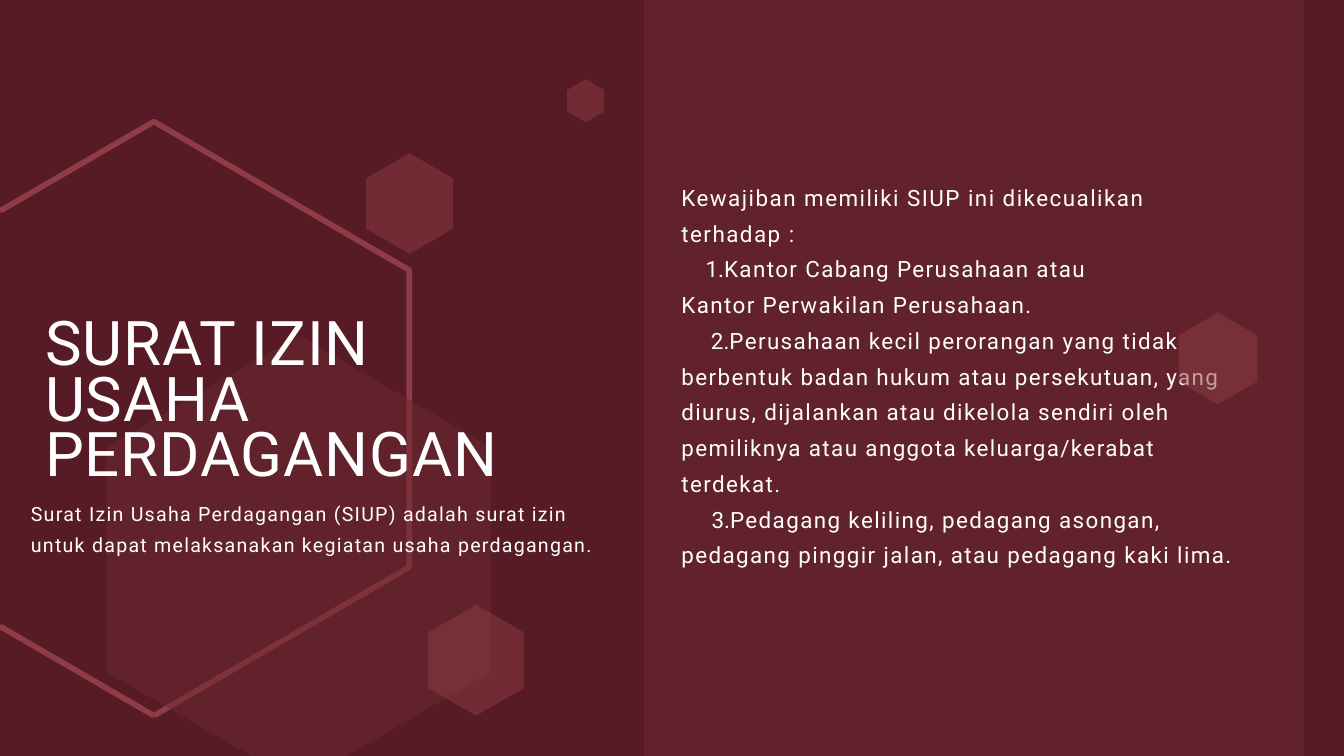
from lxml import etree
from pptx import Presentation
from pptx.dml.color import RGBColor
from pptx.oxml.ns import qn
from pptx.util import Inches, Pt

COLORS = {"back": "561B24", "panel": "6D2932", "accent": "8E3C46", "text": "FFFFFF"}
FONT = "Roboto"
WIDE, HIGH = 20, 11.25

TITLE = "SURAT IZIN\vUSAHA PERDAGANGAN"
ABOUT = ("Surat Izin Usaha Perdagangan (SIUP) adalah surat izin "
         "untuk dapat melaksanakan kegiatan usaha perdagangan.")
INTRO = "Kewajiban memiliki SIUP ini dikecualikan terhadap :"
# Exempt parties: first-line indent and wording
ITEMS = [
    (0.36, "Kantor Cabang Perusahaan atau\vKantor Perwakilan Perusahaan."),
    (0.44, "Perusahaan kecil perorangan yang tidak berbentuk badan hukum atau "
           "persekutuan, yang diurus, dijalankan atau dikelola sendiri oleh "
           "pemiliknya atau anggota keluarga/kerabat terdekat."),
    (0.45, "Pedagang keliling, pedagang asongan, pedagang pinggir jalan, "
           "atau pedagang kaki lima."),
]


def rgb(name):
    return RGBColor.from_string(COLORS[name])


def outline(slide, lines, closed):
    """Build one freeform from lists of points in inches."""
    paths = [[(Inches(x), Inches(y)) for x, y in line] for line in lines]
    pen = slide.shapes.build_freeform(*paths[0][0])
    for i, path in enumerate(paths):
        if i:
            pen.move_to(*path[0])
        pen.add_line_segments(path[1:], close=closed)
    shape = pen.convert_to_shape()
    shape.shadow.inherit = False
    return shape


def paint(shape, color, alpha=None):
    shape.fill.solid()
    shape.fill.fore_color.rgb = rgb(color)
    shape.line.fill.background()
    if alpha:
        tone = shape.fill._xPr.find(qn("a:solidFill"))[0]
        etree.SubElement(tone, qn("a:alpha")).set("val", str(alpha * 1000))


def hexagon(slide, x, y, w, h):
    """Pointed-top hexagon in the given box."""
    mid, upper, lower = x + w / 2, y + h / 4, y + h * 3 / 4
    points = [(mid, y), (x + w, upper), (x + w, lower),
              (mid, y + h), (x, lower), (x, upper)]
    paint(outline(slide, [points], True), "accent", 50)


def block(slide, x, y, w, h, top):
    box = slide.shapes.add_textbox(Inches(x), Inches(y), Inches(w), Inches(h))
    frame = box.text_frame
    frame.word_wrap = True
    frame.margin_left = frame.margin_right = frame.margin_bottom = 0
    frame.margin_top = Inches(top)
    return frame


def write(para, text, size, track, leading, before=0, left=0.01, indent=0, number=False):
    para.text = text
    para.line_spacing = leading
    para.space_before = Pt(before)
    props = para._p.get_or_add_pPr()
    props.set("marL", str(Inches(left)))
    props.set("indent", str(Inches(indent)))
    if number:
        etree.SubElement(props, qn("a:buAutoNum")).set("type", "arabicPeriod")
    for run in para.runs:
        run.font.size = Pt(size)
        run.font.name = FONT
        run.font.color.rgb = rgb("text")
        run._r.get_or_add_rPr().set("spc", str(round(track * 100)))


def backdrop(slide, x, y, w, h):
    for left, width, color, alpha in ((0, w, "back", None), (9.58, 9.83, "panel", 50)):
        a, b = x + left, x + left + width
        points = [(a, y), (b, y), (b, y + h), (a, y + h)]
        paint(outline(slide, [points], True), color, alpha)


def pattern(slide, x, y, w, h):
    # Line hexagon, cut by the left edge
    lines = [[(2.29, 10.65), (0, 9.32)],
             [(0, 3.14), (2.29, 1.81), (6.09, 4.02), (6.09, 8.44), (2.29, 10.65)]]
    ring = outline(slide, [[(x + a, y + b) for a, b in line] for line in lines], False)
    ring.fill.background()
    ring.line.color.rgb = rgb("accent")
    ring.line.width = Pt(6)
    # Large hexagon, cut by the bottom edge
    large = [(4.45, 4.99), (7.31, 6.66), (7.31, 10), (5.16, h),
             (3.74, h), (1.58, 10), (1.58, 6.66)]
    paint(outline(slide, [[(x + a, y + b) for a, b in large]], True), "panel", 50)
    # Small hexagons
    for left, top, width, height in ((5.45, 2.28, 1.29, 1.5), (6.37, 9, 1.43, 1.65),
                                     (8.44, 1.18, 0.55, 0.64)):
        hexagon(slide, x + left, y + top, width, height)


def exempt(slide, x, y, w, h):
    intro = block(slide, x, y, 7.29, 1.09, 0.01)
    write(intro.paragraphs[0], INTRO, 24, 1.6, 1.33, 1)
    frame = block(slide, x, y + 1.06, w, h - 1.06, 0.01)
    for i, (indent, text) in enumerate(ITEMS):
        para = frame.add_paragraph() if i else frame.paragraphs[0]
        write(para, text, 24, 1.5, 1.33, 0 if i else 1, indent=indent, number=True)
    # Hexagon over the text
    hexagon(slide, x + 7.41, y + 2.05, 1.17, 1.37)


def heading(slide, x, y, w, h):
    frame = block(slide, x, y, w, h, 0.29)
    write(frame.paragraphs[0], TITLE, 66, 1, 0.75, 20.9, left=0.22)
    write(frame.add_paragraph(), ABOUT, 21, 1.35, 1.31, 7.7)


def main():
    deck = Presentation()
    deck.slide_width, deck.slide_height = Inches(WIDE), Inches(HIGH)
    slide = deck.slides.add_slide(deck.slide_layouts[6])
    backdrop(slide, 0, 0, WIDE, HIGH)
    pattern(slide, 0, 0, 9.58, HIGH)
    exempt(slide, 10.13, 2.6, 8.64, 5.87)
    heading(slide, 0.45, 4.49, 8.6, 2.97)
    deck.save("out.pptx")


if __name__ == "__main__":
    main()
